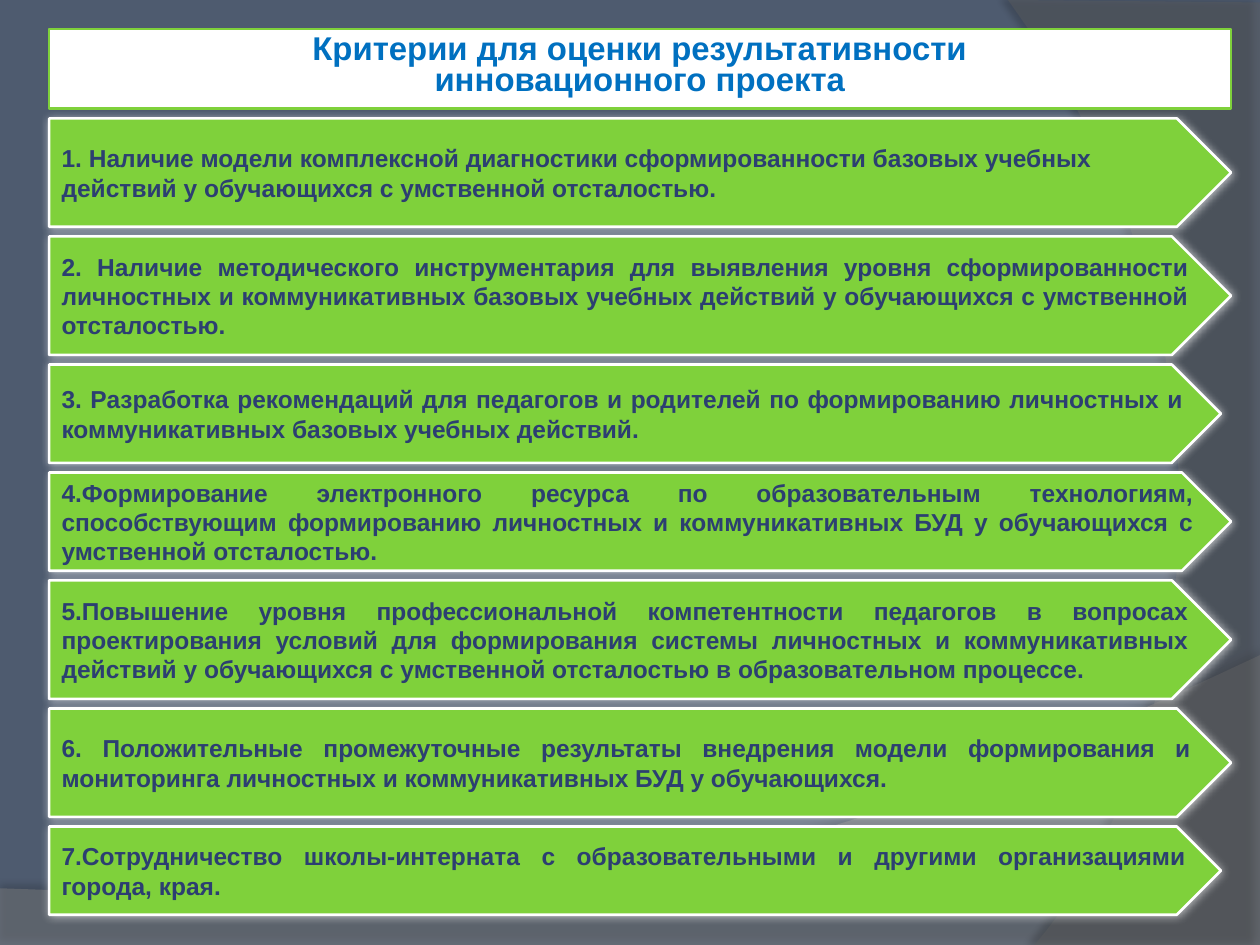
from pptx import Presentation
from pptx.dml.color import RGBColor
from pptx.enum.shapes import MSO_SHAPE as SHAPE
from pptx.enum.text import MSO_ANCHOR as ANCHOR, PP_ALIGN as ALIGN
from pptx.oxml.ns import qn
from pptx.util import Inches, Pt
from lxml.etree import SubElement

GREEN, WHITE, NAVY, BLUE = "7FD13B", "FFFFFF", "2C3F71", "0070C0"
TITLE = ["Критерии для оценки результативности", "инновационного проекта"]
CRITERIA = [
    ("1. Наличие модели комплексной диагностики сформированности базовых учебных действий у обучающихся с умственной отсталостью.", 9.38, 0.86, ALIGN.LEFT),
    ("2. Наличие методического инструментария для выявления уровня сформированности личностных и коммуникативных базовых учебных действий у обучающихся с умственной отсталостью.", 9.38, 0.94, ALIGN.JUSTIFY),
    ("3. Разработка рекомендаций для педагогов и родителей по формированию личностных и коммуникативных базовых учебных действий.", 9.3, 0.78, ALIGN.JUSTIFY),
    ("4.Формирование электронного ресурса по образовательным технологиям, способствующим формированию личностных и коммуникативных БУД у обучающихся с умственной отсталостью.", 9.38, 0.78, ALIGN.JUSTIFY),
    ("5.Повышение уровня профессиональной компетентности педагогов в вопросах проектирования условий для формирования системы личностных и коммуникативных действий у обучающихся с умственной отсталостью в образовательном процессе.", 9.38, 0.94, ALIGN.JUSTIFY),
    ("6. Положительные промежуточные результаты внедрения модели формирования и мониторинга личностных и коммуникативных БУД у обучающихся.", 9.38, 0.86, ALIGN.JUSTIFY),
    ("7.Сотрудничество школы-интерната с образовательными и другими организациями города, края.", 9.3, 0.7, ALIGN.JUSTIFY),
]


def rgb(value):
    return RGBColor.from_string(value)


def set_alpha(color, percent):
    SubElement(color, qn("a:alpha"), val=str(percent * 1000))


def add_shadow(sp, color, alpha, blur, dist=0, angle=0):
    sp.shadow.inherit = False
    effects = sp._element.spPr.find(qn("a:effectLst"))
    shadow = SubElement(effects, qn("a:outerShdw"), blurRad=str(Pt(blur)),
                        dist=str(Pt(dist)), dir=str(angle * 60000),
                        algn="ctr", rotWithShape="0")
    set_alpha(SubElement(shadow, qn("a:srgbClr"), val=color), alpha)


def add_box(slide, kind, box, fill, line):
    sp = slide.shapes.add_shape(kind, *map(Inches, box))
    sp.shadow.inherit = False
    sp.fill.solid()
    sp.fill.fore_color.rgb = rgb(fill)
    sp.line.color.rgb = rgb(line)
    sp.line.width = Pt(1.5)
    return sp


def add_text(sp, lines, size, color, align, anchor, spacing=1.0):
    tf = sp.text_frame
    tf.word_wrap = True
    tf.vertical_anchor = anchor
    for i, line in enumerate(lines):
        p = tf.add_paragraph() if i else tf.paragraphs[0]
        p.alignment = align
        p.line_spacing = spacing
        r = p.add_run()
        r.text = line
        r.font.size = Pt(size)
        r.font.name = "Arial"
        r.font.bold = True
        r.font.color.rgb = rgb(color)


def curve(start, c1, c2, end, steps=40):
    points = []
    for i in range(1, steps + 1):
        t = i / steps
        u = 1 - t
        points.append(tuple(
            u ** 3 * a + 3 * u * u * t * b + 3 * u * t * t * c + t ** 3 * d
            for a, b, c, d in zip(start, c1, c2, end)))
    return points


def add_wave(slide, points, fill, alpha, shadow):
    start, *rest = [(Inches(x), Inches(y)) for x, y in points]
    builder = slide.shapes.build_freeform(*start)
    builder.add_line_segments(rest, close=True)
    sp = builder.convert_to_shape()
    sp.fill.solid()
    sp.fill.fore_color.rgb = rgb(fill)
    set_alpha(sp._element.spPr.find(qn("a:solidFill"))[0], alpha)
    sp.line.fill.background()
    add_shadow(sp, *shadow)


def add_backdrop(slide, width, height):
    slide.background.fill.solid()
    slide.background.fill.fore_color.rgb = rgb("4E5B6F")
    corner = (width, 5.2)
    bottom = [(0, height), (width, height), corner]
    bottom += curve(corner, (5.59, 7.29), (3.91, 7.19), (0, 7.05))
    add_wave(slide, bottom, "7F7F7F", 45, ("000000", 35, 4, 3.5, 270))
    foot = (8.21, height)
    side = [(width, 0.02), (width, height), foot]
    side += curve(foot, (9.35, 6.19), (10.18, 3), (8, 0))
    add_wave(slide, side, "5E5E5E", 40, ("000000", 45, 4, 4, 180))


def add_title(slide, box):
    sp = add_box(slide, SHAPE.RECTANGLE, box, WHITE, GREEN)
    add_text(sp, TITLE, 18.8, BLUE, ALIGN.CENTER, ANCHOR.TOP, spacing=0.8)


def add_criteria(slide, left, top, height):
    gap = (height - sum(c[2] for c in CRITERIA)) / (len(CRITERIA) - 1)
    for text, w, h, align in CRITERIA:
        sp = add_box(slide, SHAPE.PENTAGON, (left, top, w, h), GREEN, WHITE)
        add_shadow(sp, WHITE, 60, 5)
        add_text(sp, [text], 14, NAVY, align, ANCHOR.MIDDLE)
        top += h + gap


def main():
    prs = Presentation()
    prs.slide_width, prs.slide_height = Inches(10), Inches(7.5)
    slide = prs.slides.add_slide(prs.slide_layouts[6])
    add_backdrop(slide, 10, 7.5)
    add_title(slide, (0.39, 0.23, 9.38, 0.63))
    add_criteria(slide, 0.39, 0.94, 6.32)
    prs.save("out.pptx")


if __name__ == "__main__":
    main()
